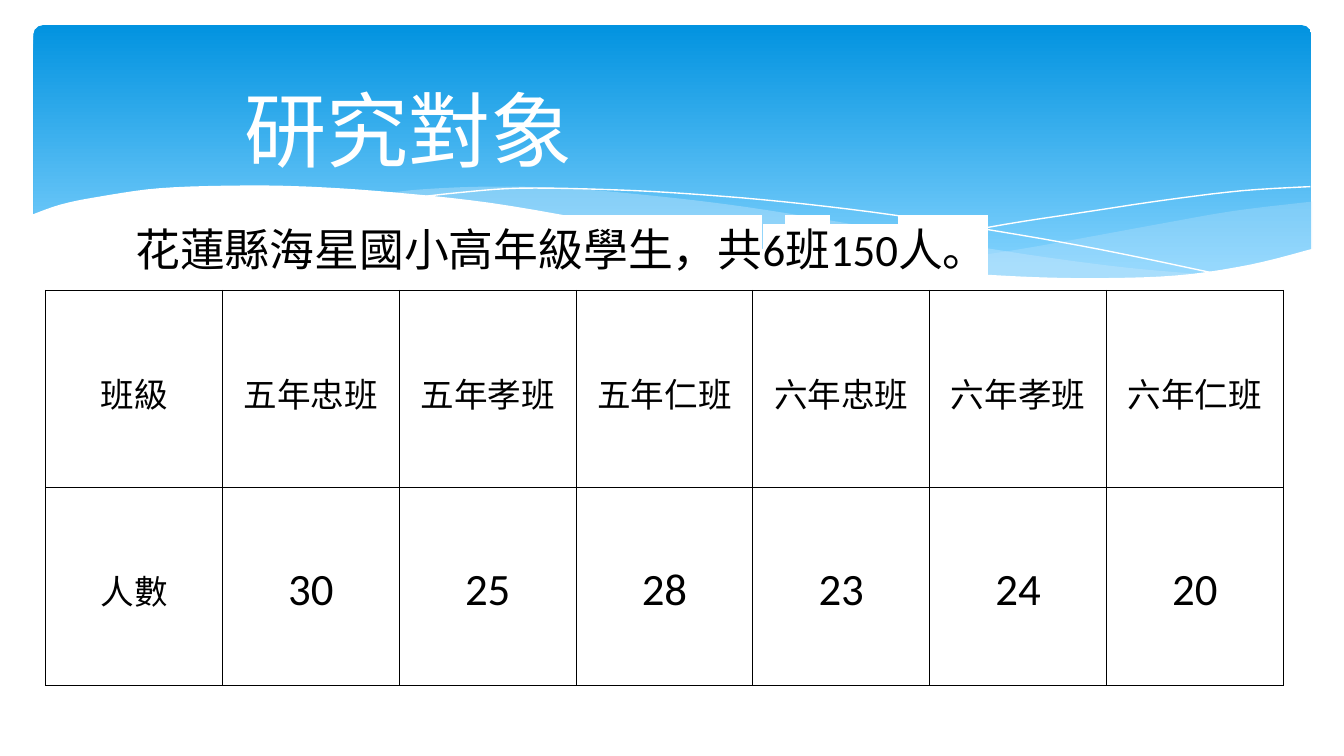
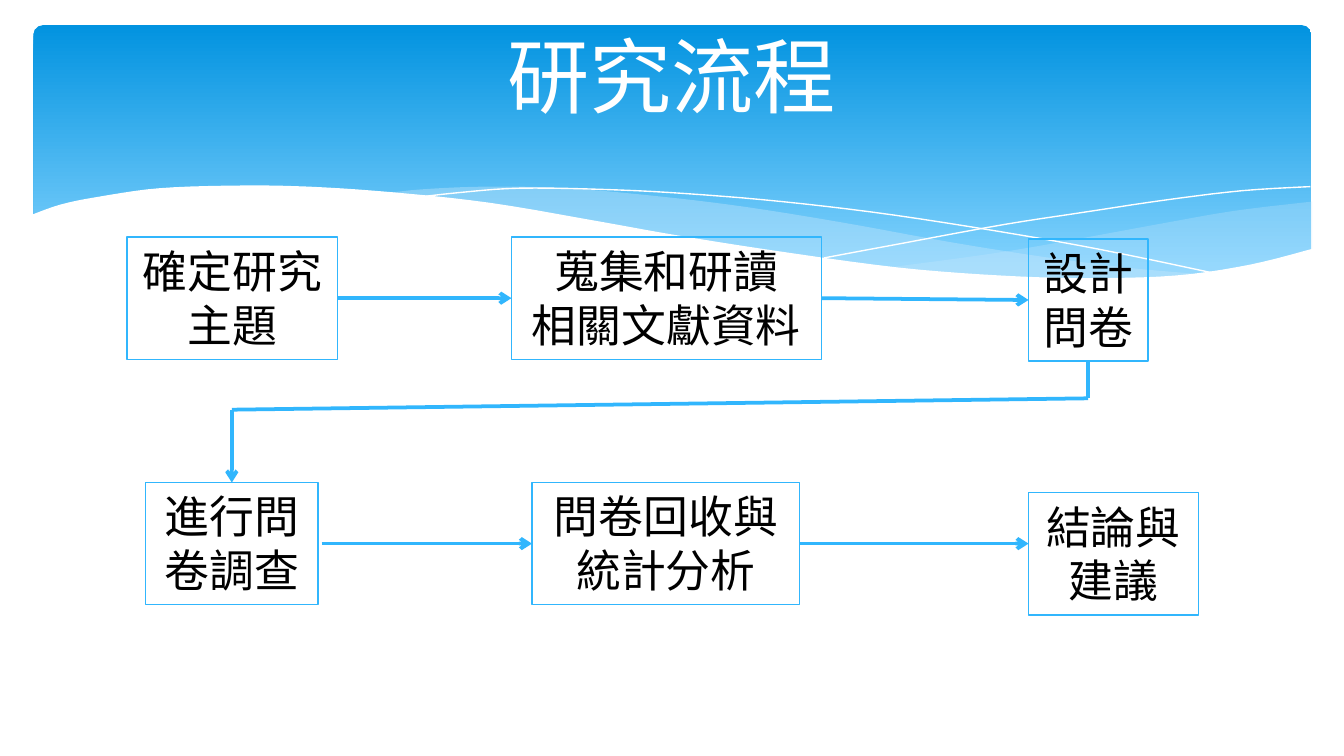
from typing import NamedTuple

from lxml.etree import SubElement
from pptx import Presentation
from pptx.dml.color import RGBColor
from pptx.enum.shapes import MSO_CONNECTOR, MSO_SHAPE
from pptx.enum.text import MSO_ANCHOR, MSO_AUTO_SIZE, PP_ALIGN
from pptx.oxml.ns import qn
from pptx.util import Pt

WHITE = "FFFFFF"
BLACK = "000000"
ACCENT = "31B6FD"
WAVE = "C6E7FC"
BAND_TOP = "0293E0"
BAND_BOTTOM = "83D3FE"
TEXT_FONT = "Calibri"
FLOW_FONT = "Arial"
TOP, LEFT, BOTTOM, RIGHT = range(4)

Point = tuple[float, float]


class Frame(NamedTuple):
    left: float
    top: float
    width: float
    height: float

    def lengths(self) -> list:
        return [Pt(value) for value in self]


class Wave(NamedTuple):
    curves: list[list[Point]]
    fill: str | None = None
    opacity: int = 100


class Step(NamedTuple):
    text: str
    frame: Frame


class Port(NamedTuple):
    """The middle of one side of a flow step."""
    step: str
    site: int


class Link(NamedTuple):
    start: Port | Point
    end: Port | Point
    arrow: bool = True


WAVES = [
    Wave([[(703, 108), (661, 113), (620, 120.2), (561, 131), (525, 136.8), (476, 143.3)],
          [(476, 143.3), (507.6, 146.2), (545, 148.7), (586, 149.8), (634, 148.3),
           (668, 143.3), (703, 133.2)]], WAVE, 29),
    Wave([[(643, 146.9), (602.6, 143.3), (558, 137.5), (508.3, 129.6), (452.9, 119.5),
           (399.6, 110.9), (352, 105.1), (302.4, 100.8), (260, 100), (225.4, 101.5),
           (206, 103.7)],
          [(206, 103.7), (246.2, 107.3), (291, 113.8), (323.3, 119.5), (381.6, 129.6),
           (432.7, 137.5), (478.8, 144), (519.8, 147.6), (565.2, 149.8),
           (610.6, 149.8), (643, 146.9)]], WAVE, 40),
    Wave([[(222.5, 105.8), (247.7, 103), (278.6, 100.8), (324, 101.5), (367.2, 103.7),
           (419, 108), (478.8, 115.2), (547.2, 126), (598.3, 135.4), (653, 146.9)]]),
    Wave([[(441.4, 138.2), (483.8, 130.3), (538.6, 120.2), (580.3, 113.8),
           (623.5, 107.3), (665.3, 102.2), (702, 100)]]),
    Wave([[(703.4, 133.2), (669.6, 141.8), (630, 147.6), (582.5, 149), (535.7, 147.6),
           (481, 143.3), (417, 134.6), (362.2, 126), (321.8, 118.8), (262.8, 108.7),
           (210.2, 103), (165.6, 100), (127.4, 99.4), (85.7, 100.8), (54.7, 105.1),
           (33.1, 109.4), (16.6, 115.2)],
          [(16.6, 177.8), (703.4, 177.8)]], WHITE),
]

CLASS_SIZES = {"五年忠班": 30, "五年孝班": 25, "五年仁班": 28,
               "六年忠班": 23, "六年孝班": 24, "六年仁班": 20}

STEP_HEIGHT = 65.5
STEPS = {
    "analysis": Step("問卷回收與統計分析", Frame(285, 258.5, 143.5, STEP_HEIGHT)),
    "conclusion": Step("結論與建議", Frame(551, 264, 91, STEP_HEIGHT)),
    "survey": Step("進行問卷調查", Frame(78, 258.5, 92.4, STEP_HEIGHT)),
    "reading": Step("蒐集和研讀\v相關文獻資料", Frame(274, 127, 166, STEP_HEIGHT)),
    "topic": Step("確定研究主題", Frame(68, 127, 113, STEP_HEIGHT)),
    "design": Step("設計問卷", Frame(551, 128, 64, STEP_HEIGHT)),
}
TURN_RIGHT = (583, 213.4)
TURN_LEFT = (124.2, 219.5)
LINKS = [
    Link(Port("topic", RIGHT), Port("reading", LEFT)),
    Link(Port("reading", RIGHT), Port("design", LEFT)),
    Link((172.3, 291.25), Port("analysis", LEFT)),
    Link(Port("analysis", RIGHT), (551, 291.25)),
    Link(Port("design", BOTTOM), TURN_RIGHT, arrow=False),
    Link(TURN_RIGHT, TURN_LEFT, arrow=False),
    Link(TURN_LEFT, Port("survey", TOP)),
]


def color(value: str) -> RGBColor:
    return RGBColor.from_string(value)


def smooth(knots: list[Point], pieces: int = 5) -> list[Point]:
    """Return points on a Catmull-Rom curve through the knots."""
    padded = [knots[0], *knots, knots[-1]]
    points = [knots[0]]
    for a, b, c, d in zip(padded, padded[1:], padded[2:], padded[3:]):
        for number in range(1, pieces + 1):
            t = number / pieces
            points.append(tuple(
                q + t * (r - p) / 2 + t * t * (2 * p - 5 * q + 4 * r - s) / 2
                + t ** 3 * (3 * q - p - 3 * r + s) / 2
                for p, q, r, s in zip(a, b, c, d)))
    return points


def draw_wave(page, wave: Wave) -> None:
    points = [(Pt(x), Pt(y)) for curve in wave.curves for x, y in smooth(curve)]
    builder = page.shapes.build_freeform(*points[0])
    builder.add_line_segments(points[1:], close=wave.fill is not None)
    shape = builder.convert_to_shape()
    shape.shadow.inherit = False
    if wave.fill is None:
        shape.fill.background()
        shape.line.color.rgb = color(WHITE)
        shape.line.width = Pt(0)
        return
    shape.line.fill.background()
    shape.fill.solid()
    shape.fill.fore_color.rgb = color(wave.fill)
    if wave.opacity < 100:
        fill_color = shape._element.spPr.find(qn("a:solidFill"))[0]
        SubElement(fill_color, qn("a:alpha"), val=str(wave.opacity * 1000))


def draw_band(page) -> None:
    band = page.shapes.add_shape(MSO_SHAPE.ROUNDED_RECTANGLE,
                                 *Frame(18, 13.5, 684.5, 145.5).lengths())
    band.adjustments[0] = 0.034
    band.shadow.inherit = False
    band.line.fill.background()
    band.fill.gradient()
    band.fill.gradient_angle = 270
    for stop, position, value in zip(band.fill.gradient_stops, (0, 0.9),
                                     (BAND_TOP, BAND_BOTTOM)):
        stop.position = position
        stop.color.rgb = color(value)
    for wave in WAVES:
        draw_wave(page, wave)


def format_paragraph(paragraph, size: float, value: str = BLACK, font: str = TEXT_FONT,
                     align: PP_ALIGN = PP_ALIGN.CENTER) -> None:
    paragraph.alignment = align
    for span in paragraph.runs:
        span.font.size = Pt(size)
        span.font.name = font
        span.font.color.rgb = color(value)


def add_text(page, text: str, frame: Frame, size: float, value: str,
             indent: float | None = None):
    """Add a line of text, centred unless a left indent is given."""
    box = page.shapes.add_textbox(*frame.lengths())
    text_frame = box.text_frame
    text_frame.word_wrap = True
    text_frame.margin_left = text_frame.margin_right = Pt(7.2)
    text_frame.margin_top = text_frame.margin_bottom = Pt(7.2)
    text_frame.text = text
    paragraph = text_frame.paragraphs[0]
    align = PP_ALIGN.CENTER if indent is None else PP_ALIGN.LEFT
    format_paragraph(paragraph, size, value, align=align)
    if indent is not None:
        paragraph._p.get_or_add_pPr().set("indent", str(Pt(indent)))
    return paragraph


def add_page(deck, title: str, frame: Frame, indent: float | None = None):
    page = deck.slides.add_slide(deck.slide_layouts[6])
    draw_band(page)
    add_text(page, title, frame, 44, WHITE, indent)
    return page


def highlight(span, value: str) -> None:
    mark = SubElement(span.font._element, qn("a:highlight"))
    SubElement(mark, qn("a:srgbClr"), val=value)
    span.font._element.find(qn("a:solidFill")).addnext(mark)


def draw_borders(cell) -> None:
    properties = cell._tc.get_or_add_tcPr()
    for number, side in enumerate(("lnL", "lnR", "lnT", "lnB")):
        border = SubElement(properties, qn(f"a:{side}"), w=str(Pt(0.5)))
        fill = SubElement(border, qn("a:solidFill"))
        SubElement(fill, qn("a:srgbClr"), val=BLACK)
        properties.insert(number, border)


def add_class_table(page) -> None:
    rows = [["班級", *CLASS_SIZES], ["人數", *CLASS_SIZES.values()]]
    frame = Frame(24.5, 155.5, 663, 211.6)
    table = page.shapes.add_table(len(rows), len(rows[0]), *frame.lengths()).table
    table.first_row = table.horz_banding = False
    for row, values in zip(table.rows, rows):
        for cell, value in zip(row.cells, values):
            cell.fill.background()
            draw_borders(cell)
            cell.vertical_anchor = MSO_ANCHOR.MIDDLE
            cell.margin_left = cell.margin_right = Pt(5)
            cell.margin_top = cell.margin_bottom = Pt(0)
            cell.text_frame.text = str(value)
            paragraph = cell.text_frame.paragraphs[0]
            paragraph.line_spacing = 1.15
            format_paragraph(paragraph, 24 if isinstance(value, int) else 18)


def add_step(page, step: Step):
    box = page.shapes.add_shape(MSO_SHAPE.RECTANGLE, *step.frame.lengths())
    box.shadow.inherit = False
    box.fill.background()
    box.line.color.rgb = color(ACCENT)
    box.line.width = Pt(0.75)
    text_frame = box.text_frame
    text_frame.word_wrap = True
    text_frame.auto_size = MSO_AUTO_SIZE.SHAPE_TO_FIT_TEXT
    text_frame.vertical_anchor = MSO_ANCHOR.TOP
    text_frame.text = step.text
    format_paragraph(text_frame.paragraphs[0], 24, font=FLOW_FONT)
    return box


def add_link(page, link: Link, boxes: dict) -> None:
    start, end = [(0, 0) if isinstance(place, Port) else place
                  for place in (link.start, link.end)]
    line = page.shapes.add_connector(MSO_CONNECTOR.STRAIGHT,
                                     *[Pt(value) for value in (*start, *end)])
    if isinstance(link.start, Port):
        line.begin_connect(boxes[link.start.step], link.start.site)
    if isinstance(link.end, Port):
        line.end_connect(boxes[link.end.step], link.end.site)
    line.line.color.rgb = color(ACCENT)
    line.line.width = Pt(2)
    if link.arrow:
        SubElement(line.line._get_or_add_ln(), qn("a:tailEnd"), type="arrow")
    SubElement(line._element.spPr, qn("a:effectLst"))


def build_subjects(deck) -> None:
    page = add_page(deck, "研究對象", Frame(24.5, 35.3, 671, 45.4), indent=99.4)
    summary = add_text(page, "花蓮縣海星國小高年級學生，共6班150人。",
                       Frame(16.6, 107.3, 671, 190.8), 24, BLACK, indent=48.8)
    summary.line_spacing = 1.15
    highlight(summary.runs[0], WHITE)
    add_class_table(page)


def build_process(deck) -> None:
    page = add_page(deck, "研究流程", Frame(24.5, 6.5, 671, 68.4))
    boxes = {name: add_step(page, step) for name, step in STEPS.items()}
    for link in LINKS:
        add_link(page, link, boxes)


def main() -> None:
    deck = Presentation()
    deck.slide_width, deck.slide_height = Pt(720), Pt(405)
    build_subjects(deck)
    build_process(deck)
    deck.save("out.pptx")


if __name__ == "__main__":
    main()
